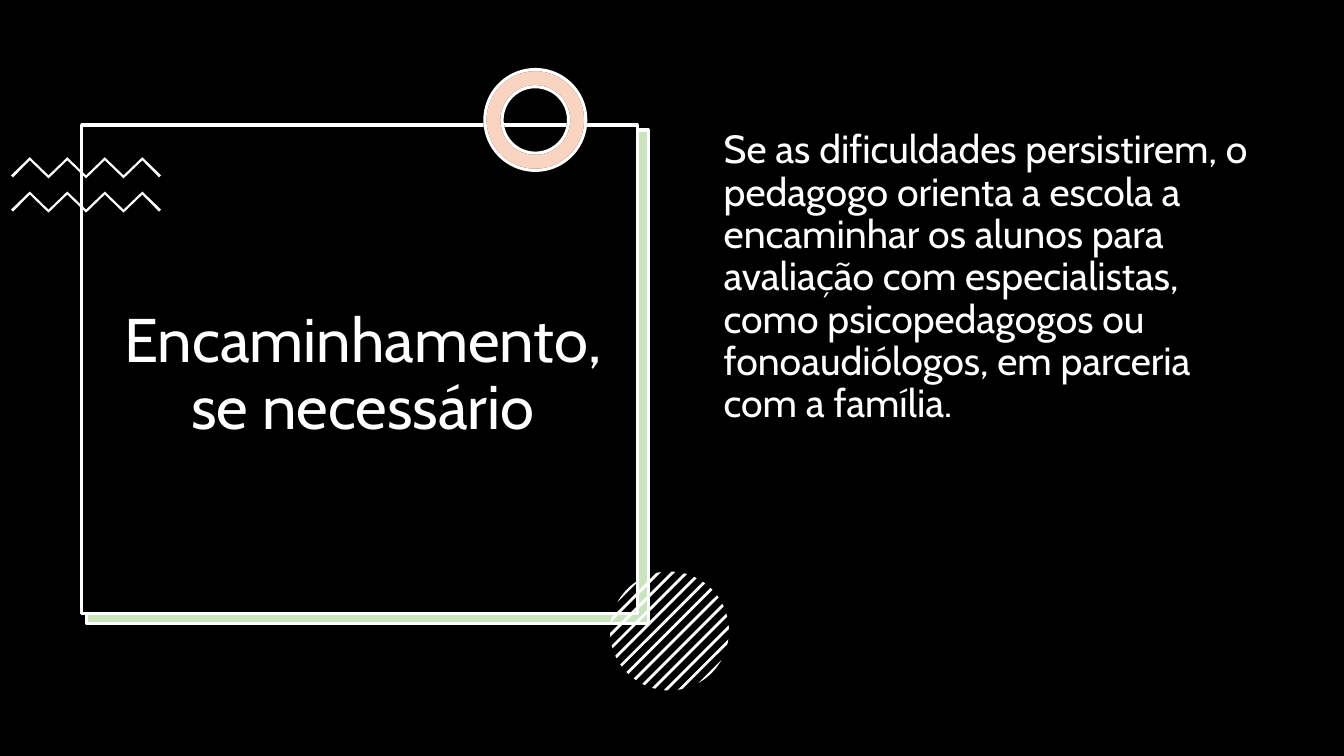
import math

from lxml import etree
from pptx import Presentation
from pptx import util as u
from pptx.dml.color import RGBColor
from pptx.enum import shapes, text
from pptx.oxml.ns import qn

COLORS = {"black": "000000", "white": "FFFFFF", "green": "4EA72E", "orange": "E97132"}


class SlideBuilder:
    font_name = "Cabin"
    line_width = u.Pt(2.25)

    def __init__(self, deck):
        self.page = deck.slides.add_slide(deck.slide_layouts[5])

    def color(self, name):
        return RGBColor.from_string(COLORS[name])

    def paint(self, shape, fill, line=None, opacity=None):
        shape.shadow.inherit = False
        shape.fill.solid()
        shape.fill.fore_color.rgb = self.color(fill)
        if opacity:
            tone = shape.element.spPr.find(qn("a:solidFill"))[0]
            etree.SubElement(tone, qn("a:alpha"), val=str(opacity * 1000))
        if line:
            shape.line.color.rgb = self.color(line)
            shape.line.width = self.line_width
        else:
            shape.line.fill.background()

    def preset(self, kind, left, top, width, height, fill, line=None, opacity=None):
        shape = self.page.shapes.add_shape(kind, *map(u.Inches, (left, top, width, height)))
        self.paint(shape, fill, line, opacity)
        return shape

    def rectangle(self, *args, **style):
        return self.preset(shapes.MSO_SHAPE.RECTANGLE, *args, **style)

    def ring(self, left, top, size, thickness, **style):
        shape = self.preset(shapes.MSO_SHAPE.DONUT, left, top, size, size, **style)
        shape.adjustments[0] = thickness / size

    def outline(self, points, fill):
        first, *rest = [(u.Inches(x), u.Inches(y)) for x, y in points]
        builder = self.page.shapes.build_freeform(*first)
        builder.add_line_segments(rest, close=True)
        self.paint(builder.convert_to_shape(), fill)

    def zigzag(self, left, top, fill):
        step, rise, thickness = 0.186, 0.18, 0.03
        upper = [(left + step * i, top + rise * (i % 2 == 0)) for i in range(9)]
        lower = [(x, y + thickness) for x, y in reversed(upper[1:-1])]
        right_end = (upper[-1][0] - 0.02, top + rise + 0.02)
        left_end = (left + 0.02, top + rise + 0.02)
        self.outline(upper + [right_end] + lower + [left_end], fill)

    def striped_circle(self, center_x, center_y, radius, fill):
        count, gap, half, steps = 13, 0.097, 0.014, 8
        diagonal = math.pi / 4
        for index in range(count):
            middle = (index - count // 2) * gap
            edges = [max(-radius, min(radius, middle + side)) for side in (-half, half)]
            start, end = [math.acos(edge / radius) for edge in edges]
            arc = [start + (end - start) * i / steps for i in range(steps + 1)]
            angles = arc + [-angle for angle in reversed(arc)]
            self.outline(
                [
                    (
                        center_x + radius * math.cos(diagonal + angle),
                        center_y + radius * math.sin(diagonal + angle),
                    )
                    for angle in angles
                ],
                fill,
            )

    def set_text(self, box, words, size, align, anchor, before=0):
        frame = box.text_frame
        frame.text = words
        frame.word_wrap = True
        frame.auto_size = text.MSO_AUTO_SIZE.NONE
        frame.vertical_anchor = anchor
        para = frame.paragraphs[0]
        para.alignment = align
        para.line_spacing = 0.9
        para.space_before = u.Pt(before)
        para.font.name = self.font_name
        para.font.size = u.Pt(size)
        para.font.color.rgb = self.color("white")

    def title(self, left, top, width, height, words):
        box = self.page.shapes.title
        box.left, box.top, box.width, box.height = map(u.Inches, (left, top, width, height))
        box.element.getparent().append(box.element)
        self.set_text(box, words, 44, text.PP_ALIGN.CENTER, text.MSO_ANCHOR.MIDDLE)

    def body(self, left, top, width, height, words):
        box = self.page.shapes.add_textbox(*map(u.Inches, (left, top, width, height)))
        self.set_text(box, words, 28, text.PP_ALIGN.LEFT, text.MSO_ANCHOR.TOP, before=10)


def main():
    deck = Presentation()
    deck.slide_width, deck.slide_height = u.Inches(13.33), u.Inches(7.5)
    slide = SlideBuilder(deck)

    slide.rectangle(0, 0, 13.33, 7.5, fill="black")
    slide.rectangle(0.85, 1.3, 5.57, 4.9, fill="white")
    slide.rectangle(0.86, 1.29, 5.57, 4.9, fill="green", line="white", opacity=30)
    slide.rectangle(0.81, 1.24, 5.51, 4.85, fill="black", line="white")

    for top in (1.56, 1.9):
        slide.zigzag(0.11, top, "white")

    slide.ring(4.81, 0.69, 1, 0.17, fill="white", line="black")
    slide.ring(4.81, 0.69, 1, 0.17, fill="orange", line="white", opacity=30)
    slide.striped_circle(6.64, 6.26, 0.59, "white")

    slide.title(0.92, 1.52, 5.36, 4.42, "Encaminhamento, se necessário")
    slide.body(
        7.08, 1.24, 5.44, 4.76,
        "Se as dificuldades persistirem, o pedagogo orienta a escola a encaminhar "
        "os alunos para avaliação com especialistas, como psicopedagogos ou "
        "fonoaudiólogos, em parceria com a família.",
    )
    deck.save("out.pptx")


if __name__ == "__main__":
    main()
